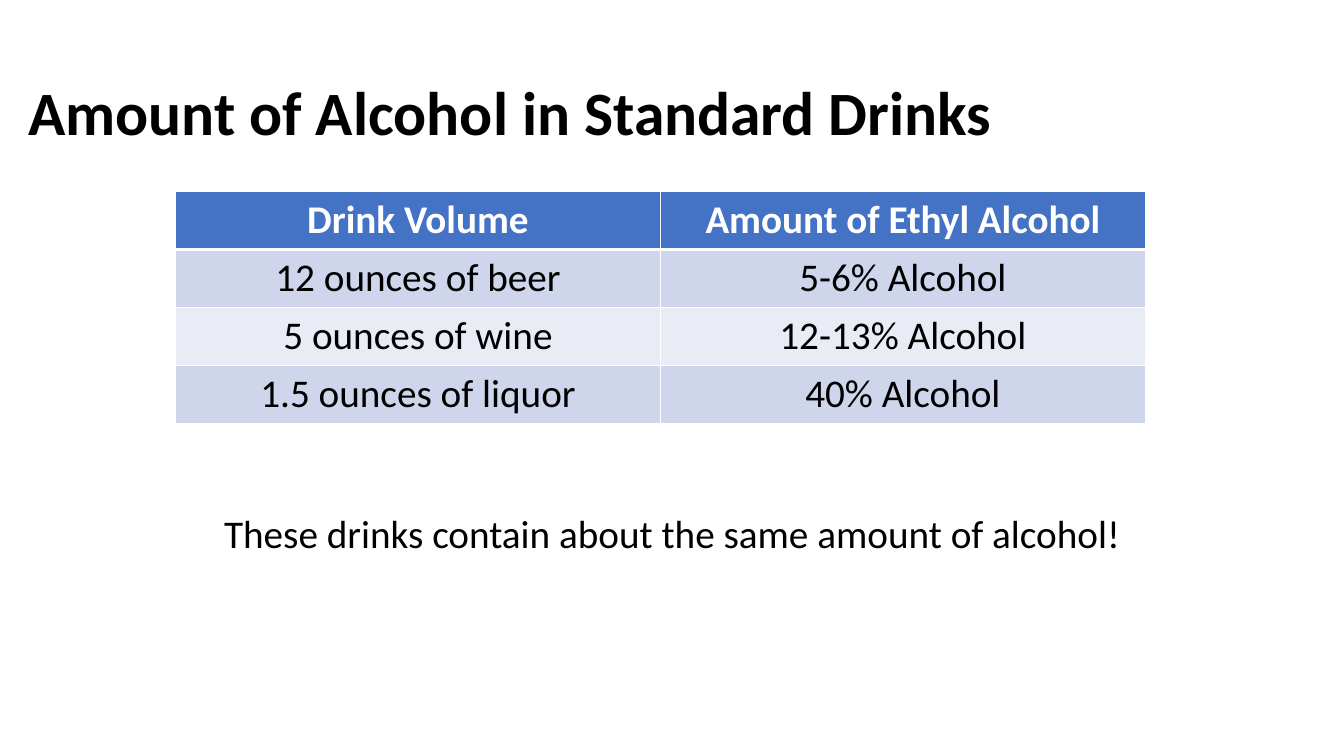
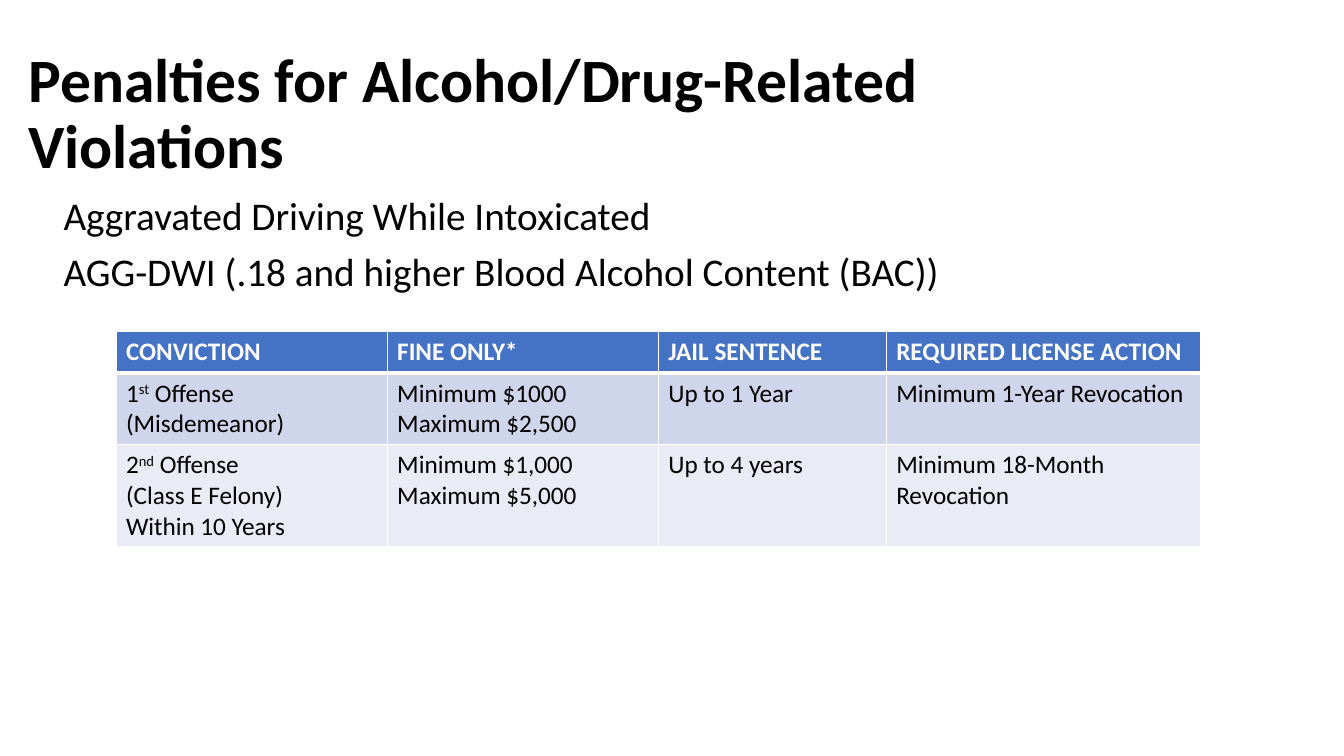
from lxml import etree
from pptx import Presentation
from pptx.dml.color import RGBColor
from pptx.enum.text import MSO_ANCHOR, MSO_AUTO_SIZE, PP_ALIGN
from pptx.oxml.ns import qn
from pptx.util import Inches, Pt

LEFT, CENTER = PP_ALIGN.LEFT, PP_ALIGN.CENTER
MIDDLE = MSO_ANCHOR.MIDDLE
NO_FIT = MSO_AUTO_SIZE.NONE
TITLE_AND_BODY, TITLE_ONLY = 1, 5

FONT = "Calibri"
COLORS = {
    "text": "000000",
    "header_text": "FFFFFF",
    "header": "4472C4",
    "odd_row": "CFD5EA",
    "even_row": "E9EBF5",
    "border": "FFFFFF",
}
TITLE_BOX = (0.18, 0.42, 11.5, 1.45)

DRINKS = [
    ["Drink Volume", "Amount of Ethyl Alcohol"],
    ["12 ounces of beer", "5-6% Alcohol"],
    ["5 ounces of wine", "12-13% Alcohol"],
    ["1.5 ounces of liquor", "40% Alcohol"],
]
# Text between carets is superscript
PENALTIES = [
    ["CONVICTION", "FINE ONLY*", "JAIL SENTENCE", "REQUIRED LICENSE ACTION"],
    ["1^st^ Offense\n(Misdemeanor)", "Minimum $1000\nMaximum $2,500",
     "Up to 1 Year", "Minimum 1-Year Revocation"],
    ["2^nd^ Offense\n(Class E Felony)\nWithin 10 Years",
     "Minimum $1,000\nMaximum $5,000",
     "Up to 4 years", "Minimum 18-Month Revocation"],
]


def style(p, size, color="text", bold=False, align=LEFT):
    p.alignment = align
    p.font.name = FONT
    p.font.size = Pt(size)
    p.font.bold = bold
    p.font.color.rgb = RGBColor.from_string(COLORS[color])


def place(sp, box):
    sp.left, sp.top, sp.width, sp.height = map(Inches, box)


def add_runs(p, text):
    """Add text to a paragraph, raising the parts between carets."""
    for i, part in enumerate(text.split("^")):
        r = p.add_run()
        r.text = part
        if i % 2:
            r._r.get_or_add_rPr().set("baseline", "30000")


def fill_text(tf, lines, size, **look):
    for i, line in enumerate(lines):
        p = tf.paragraphs[0] if i == 0 else tf.add_paragraph()
        add_runs(p, line)
        style(p, size, **look)


def add_titled_slide(prs, layout, title):
    slide = prs.slides.add_slide(prs.slide_layouts[layout])
    sp = slide.shapes.title
    place(sp, TITLE_BOX)
    tf = sp.text_frame
    tf.auto_size = NO_FIT
    tf.vertical_anchor = MIDDLE
    fill_text(tf, [title], 44, bold=True)
    tf.paragraphs[0].line_spacing = 0.9
    return slide


def add_body(slide, box, lines):
    sp = slide.placeholders[1]
    place(sp, box)
    tf = sp.text_frame
    tf.auto_size = NO_FIT
    fill_text(tf, lines, 28)
    for i, p in enumerate(tf.paragraphs):
        p.line_spacing = 0.9
        p.space_before = Pt(10 if i else 0)
        pPr = p._p.get_or_add_pPr()
        pPr.set("marL", "0")
        pPr.set("indent", "0")
        bullet = etree.Element(qn("a:buNone"))
        pPr.find(qn("a:defRPr")).addprevious(bullet)


def set_borders(cell, top, bottom):
    tcPr = cell._tc.get_or_add_tcPr()
    for side, width in (("L", 1), ("R", 1), ("T", top), ("B", bottom)):
        ln = etree.SubElement(tcPr, qn(f"a:ln{side}"), w=str(Pt(width)))
        fill = etree.SubElement(ln, qn("a:solidFill"))
        etree.SubElement(fill, qn("a:srgbClr"), val=COLORS["border"])


def add_table(slide, left, top, widths, heights, rows, size, align=LEFT):
    table = slide.shapes.add_table(
        len(rows), len(widths), Inches(left), Inches(top),
        Inches(sum(widths)), Inches(sum(heights))).table
    for column, width in zip(table.columns, widths):
        column.width = Inches(width)
    for i, (row, height, texts) in enumerate(zip(table.rows, heights, rows)):
        row.height = Inches(height)
        header = i == 0
        band = "header" if header else "odd_row" if i % 2 else "even_row"
        for cell, text in zip(row.cells, texts):
            set_borders(cell, 3 if i == 1 else 1, 3 if header else 1)
            cell.fill.solid()
            cell.fill.fore_color.rgb = RGBColor.from_string(COLORS[band])
            fill_text(cell.text_frame, text.split("\n"), size, bold=header,
                      color="header_text" if header else "text", align=align)


def add_note(slide, box, text):
    tf = slide.shapes.add_textbox(*map(Inches, box)).text_frame
    tf.word_wrap = True
    fill_text(tf, [text], 28, align=CENTER)


def drinks_slide(prs):
    slide = add_titled_slide(prs, TITLE_ONLY,
                             "Amount of Alcohol in Standard Drinks")
    add_table(slide, 1.74, 1.9, [4.81] * 2, [0.57] * 4, DRINKS, 28, CENTER)
    add_note(slide, (0, 5, 13.33, 0.57),
             "These drinks contain about the same amount of alcohol!")


def penalties_slide(prs):
    slide = add_titled_slide(prs, TITLE_AND_BODY,
                             "Penalties for Alcohol/Drug-Related Violations")
    add_body(slide, (0.53, 1.9, 12.08, 4.86),
             ["Aggravated Driving While Intoxicated",
              "AGG-DWI (.18 and higher Blood Alcohol Content (BAC))"])
    add_table(slide, 1.15, 3.29, [2.69, 2.69, 2.26, 3.12],
              [0.41, 0.71, 1.01], PENALTIES, 18)


def main():
    prs = Presentation()
    prs.slide_width, prs.slide_height = Inches(13.33), Inches(7.5)
    drinks_slide(prs)
    penalties_slide(prs)
    prs.save("out.pptx")


if __name__ == "__main__":
    main()
